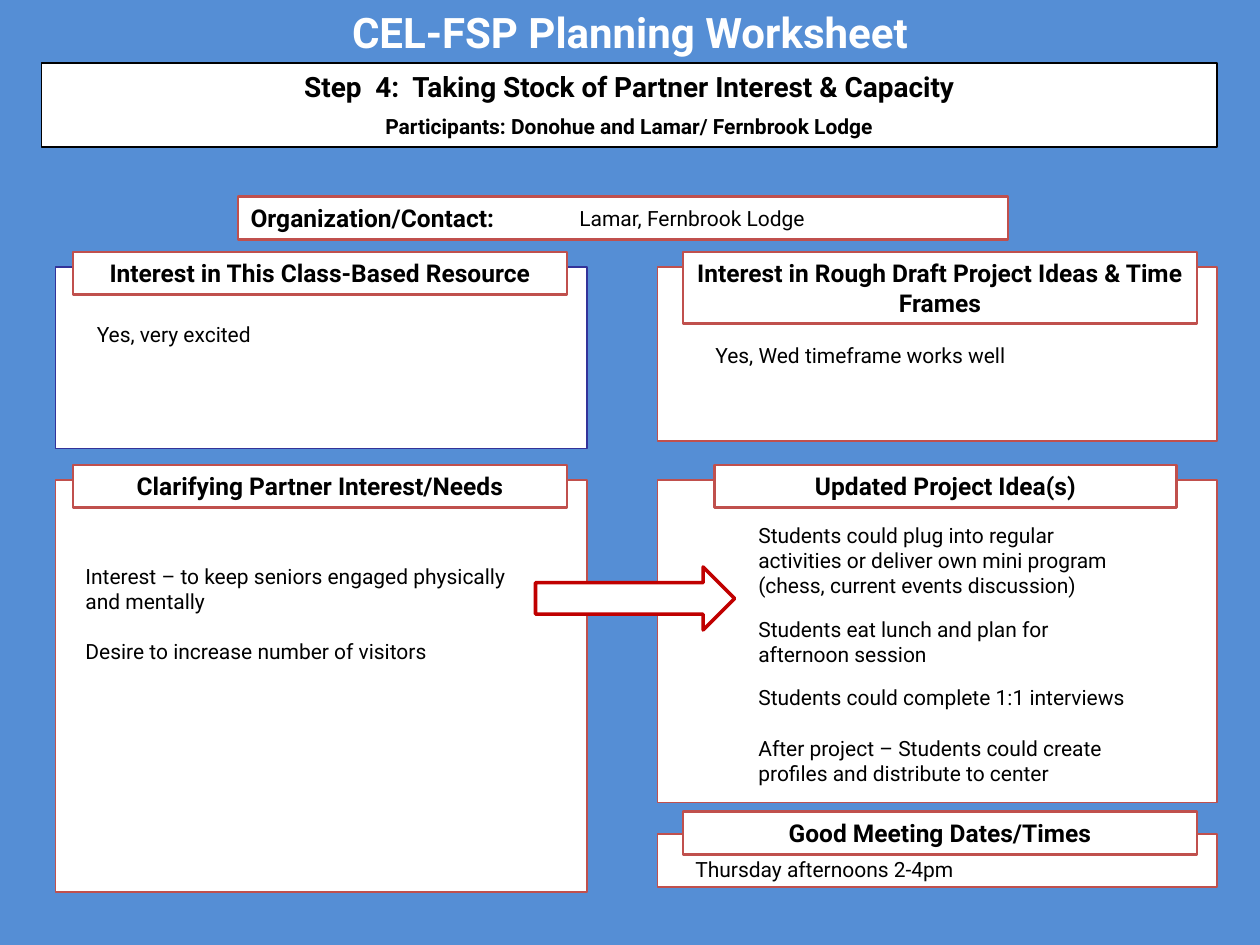
from pptx import Presentation
from pptx import util as u
from pptx.dml.color import RGBColor
from pptx.enum import shapes, text

FONT = "Roboto"
RED, WHITE, BLACK = "C0504D", "FFFFFF", "000000"
LEFT, RIGHT = (0.44, 4.22), (5.22, 4.44)
ROWS = (2, 3.69, 6.44)
HEAD = 0.34

panels = [
    dict(col=LEFT, row=0, drop=0.12, high=1.44, edge="333399",
         title="Interest in This Class-Based Resource", span=(0.58, 3.92)),
    dict(col=RIGHT, row=0, drop=0.12, high=1.38, head=0.57,
         title="Interest in Rough Draft Project Ideas & Time Frames", span=(5.42, 4.08)),
    dict(col=LEFT, row=1, drop=0.12, high=3.27,
         title="Clarifying Partner Interest/Needs", span=(0.58, 3.92)),
    dict(col=RIGHT, row=1, drop=0.12, high=2.56,
         title="Updated Project Idea(s)", span=(5.67, 3.67)),
    dict(col=RIGHT, row=2, drop=0.18, high=0.42,
         title="Good Meeting Dates/Times", span=(5.42, 4.08)),
]

notes = [
    ((4.5, 1.58, 2.25, 0.3), [("Lamar, Fernbrook Lodge", 0)]),
    ((0.67, 2.5, 3.83, 0.3), [("Yes, very excited", 0)]),
    ((5.58, 2.67, 3.83, 0.3), [("Yes, Wed timeframe works well", 0)]),
    ((0.58, 4.42, 3.83, 0.91), [
        ("Interest – to keep seniors engaged physically and mentally", 0),
        ("Desire to increase number of visitors", 14)]),
    ((5.92, 4.08, 3.25, 2.22), [
        ("Students could plug into regular activities or deliver own mini program "
         "(chess, current events discussion)", 0),
        ("Students eat lunch and plan for afternoon session", 10.5),
        ("Students could complete 1:1 interviews", 10.5),
        ("After project – Students could create profiles and distribute to center", 14.5)]),
    ((5.42, 6.75, 3.92, 0.3), [("Thursday afternoons 2-4pm", 0)]),
]

deck = Presentation()
deck.slide_width, deck.slide_height = u.Inches(10), u.Inches(7.5)
slide = deck.slides.add_slide(deck.slide_layouts[6])


def paint(fill, color):
    fill.solid()
    fill.fore_color.rgb = RGBColor.from_string(color)


def block(at, edge, width, kind=shapes.MSO_SHAPE.RECTANGLE):
    shape = slide.shapes.add_shape(kind, *map(u.Inches, at))
    shape.shadow.inherit = False
    paint(shape.fill, WHITE)
    paint(shape.line.fill, edge)
    shape.line.width = u.Pt(width)
    return shape


def label(at):
    return slide.shapes.add_textbox(*map(u.Inches, at))


def write(shape, lines, align=text.PP_ALIGN.CENTER, bold=True, color=BLACK,
          anchor=text.MSO_ANCHOR.TOP):
    frame = shape.text_frame
    frame.word_wrap = True
    frame.vertical_anchor = anchor
    frame.text = "\n".join(words for words, size, gap in lines)
    for para, (words, size, gap) in zip(frame.paragraphs, lines):
        para.alignment = align
        para.space_before = u.Pt(gap)
        font = para.runs[0].font
        font.name, font.size, font.bold = FONT, u.Pt(size), bold
        font.color.rgb = RGBColor.from_string(color)


paint(slide.background.fill, "558ED5")
write(label((0, 0, 10, 0.51)), [("CEL-FSP Planning Worksheet", 24, 0)], color=WHITE)
write(block((0.33, 0.5, 9.33, 0.67), BLACK, 1), [
    ("Step  4:  Taking Stock of Partner Interest & Capacity", 16, 0),
    ("Participants: Donohue and Lamar/ Fernbrook Lodge", 12, 6)])
write(block((1.89, 1.56, 6.11, HEAD), RED, 1.5),
      [("Organization/Contact:", 14, 0)], text.PP_ALIGN.LEFT)

for p in panels:
    top = ROWS[p["row"]]
    (x, wide), (left, span) = p["col"], p["span"]
    block((x, top + p["drop"], wide, p["high"]), p.get("edge", RED), 0.75)
    write(block((left, top, span, p.get("head", HEAD)), RED, 1.5), [(p["title"], 14, 0)])

block((4.25, 4.5, 1.58, 0.5), "C00000", 2, shapes.MSO_SHAPE.RIGHT_ARROW)

for at, lines in notes:
    anchor = text.MSO_ANCHOR.MIDDLE if len(lines) > 2 else text.MSO_ANCHOR.TOP
    write(label(at), [(words, 12, gap) for words, gap in lines],
          text.PP_ALIGN.LEFT, False, anchor=anchor)

deck.save("out.pptx")
